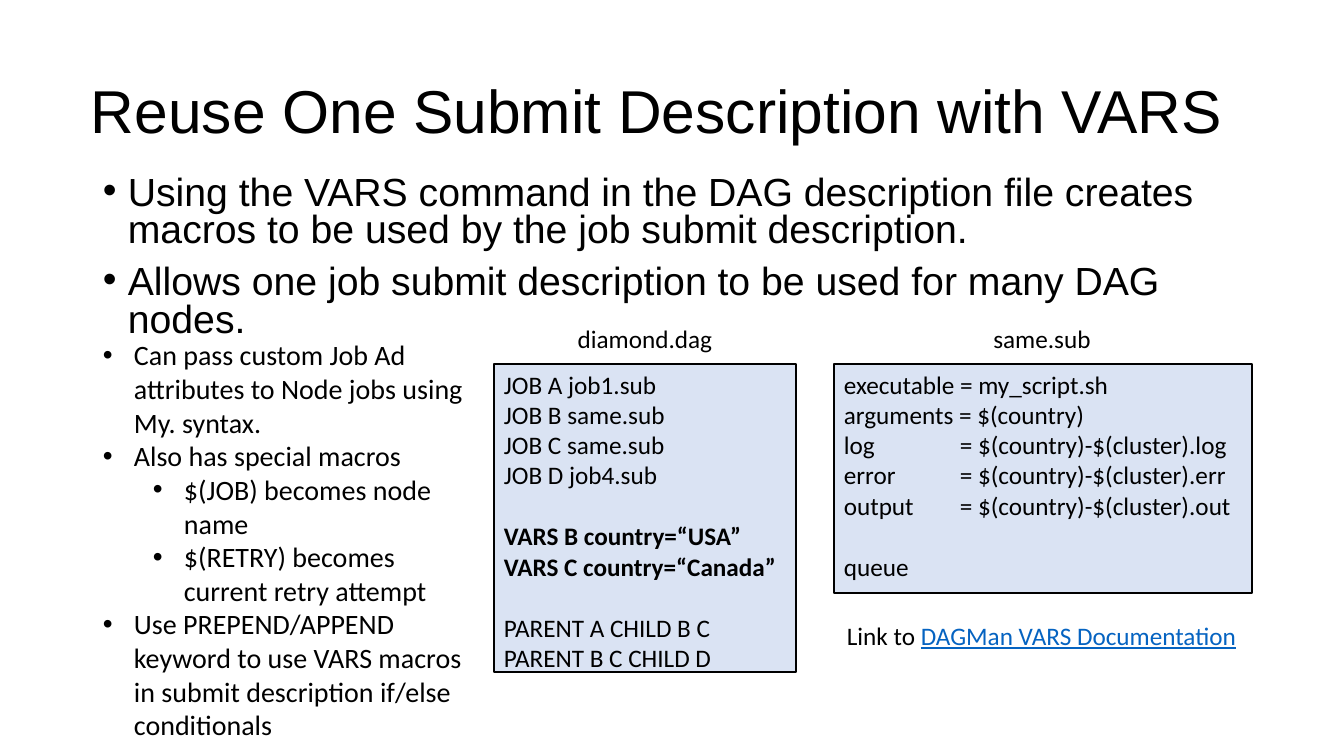
from lxml import etree
from pptx import Presentation
from pptx import util as u
from pptx.dml.color import RGBColor
from pptx.enum import shapes, text
from pptx.oxml.ns import qn

PX = 914400 / 100.8
BLACK = RGBColor(0x00, 0x00, 0x00)
PALE_BLUE = RGBColor(0xDA, 0xE3, 0xF3)
LINK_BLUE = RGBColor(0x05, 0x63, 0xC1)
CODE_LINE = 22  # height of one 18 pt code line, in points

presentation = Presentation()
presentation.slide_width = round(1344 * PX)
presentation.slide_height = round(756 * PX)
slide = presentation.slides.add_slide(presentation.slide_layouts[6])


def add_box(left, top, width, height, filled=False):
    box = [round(value * PX) for value in (left, top, width, height)]
    if filled:
        shape = slide.shapes.add_shape(shapes.MSO_SHAPE.RECTANGLE, *box)
        shape.shadow.inherit = False
        shape.fill.solid()
        shape.fill.fore_color.rgb = PALE_BLUE
        shape.line.color.rgb = BLACK
        shape.line.width = u.Pt(1)
    else:
        shape = slide.shapes.add_textbox(*box)
    shape.text_frame.word_wrap = True
    shape.text_frame.vertical_anchor = text.MSO_ANCHOR.TOP
    return shape.text_frame


def add_line(frame, words, size, font="Calibri", bold=False, indent=None, hanging=0):
    paragraph = frame.paragraphs[0]
    if paragraph.runs:
        paragraph = frame.add_paragraph()
    paragraph.alignment = text.PP_ALIGN.LEFT
    if indent is not None:
        properties = paragraph._p.get_or_add_pPr()
        properties.set("marL", str(round(indent * PX)))
        properties.set("indent", str(round(-hanging * PX)))
        etree.SubElement(properties, qn("a:buFont")).set("typeface", "Arial")
        etree.SubElement(properties, qn("a:buChar")).set("char", "•")
    run = paragraph.add_run()
    run.text = words
    run.font.size = u.Pt(size)
    run.font.name = font
    run.font.bold = bold
    run.font.color.rgb = BLACK
    return paragraph


# Title
title = add_box(81, 41, 1182, 146)
title.vertical_anchor = text.MSO_ANCHOR.MIDDLE
add_line(title, "Reuse One Submit Description with VARS", 43.2, "Arial").line_spacing = 0.9

# Main points
main_points = add_box(93, 171, 1159, 176)
for number, point in enumerate([
    "Using the VARS command in the DAG description file creates macros to be used "
    "by the job submit description.",
    "Allows one job submit description to be used for many DAG nodes.",
]):
    paragraph = add_line(main_points, point, 28, "Arial", indent=25, hanging=25)
    paragraph.line_spacing = 0.8
    if number:
        paragraph.space_before = u.Pt(10)

# DAG file: blocks of lines, one line apart
dag_file = add_box(494, 364, 302, 308, filled=True)
dag_blocks = [
    (False, ["JOB A job1.sub", "JOB B same.sub", "JOB C same.sub", "JOB D job4.sub"]),
    (True, ["VARS B country=“USA”", "VARS C country=“Canada”"]),
    (False, ["PARENT A CHILD B C", "PARENT B C CHILD D"]),
]
for block, (bold, lines) in enumerate(dag_blocks):
    for number, line in enumerate(lines):
        paragraph = add_line(dag_file, line, 18, bold=bold)
        if block and number == 0:
            paragraph.space_before = u.Pt(CODE_LINE)

# Submit file: equals signs aligned by a tab stop
submit_file = add_box(834, 364, 418, 229, filled=True)
for line in [
    "executable = my_script.sh",
    "arguments = $(country)",
    "log\t= $(country)-$(cluster).log",
    "error\t= $(country)-$(cluster).err",
    "output\t= $(country)-$(cluster).out",
    "queue",
]:
    paragraph = add_line(submit_file, line, 18)
    if "\t" in line:
        tabs = etree.SubElement(paragraph._p.get_or_add_pPr(), qn("a:tabLst"))
        etree.SubElement(tabs, qn("a:tab"), pos=str(round(116 * PX)), algn="l")
paragraph.space_before = u.Pt(CODE_LINE)

# File names above the code boxes
for left, file_name in [(519, "diamond.dag"), (916, "same.sub")]:
    label = add_line(add_box(left, 318, 252, 40), file_name, 18)
    label.alignment = text.PP_ALIGN.CENTER

# Details on the left
details = add_box(93, 333, 383, 417)
for level, detail in [
    (0, "Can pass custom Job Ad attributes to Node jobs using My. syntax."),
    (0, "Also has special macros"),
    (1, "$(JOB) becomes node name"),
    (1, "$(RETRY) becomes current retry attempt"),
    (0, "Use PREPEND/APPEND keyword to use VARS macros in submit description "
        "if/else conditionals"),
]:
    paragraph = add_line(details, detail, 20, indent=31 + 50 * level, hanging=31)
    paragraph.level = level

# Documentation reference
reference = add_line(add_box(837, 615, 419, 40), "Link to ", 18)
run = reference.add_run()
run.text = "DAGMan VARS Documentation"
run.font.size = u.Pt(18)
run.font.name = "Calibri"
run.font.color.rgb = LINK_BLUE
run.font.underline = True

presentation.save("out.pptx")
